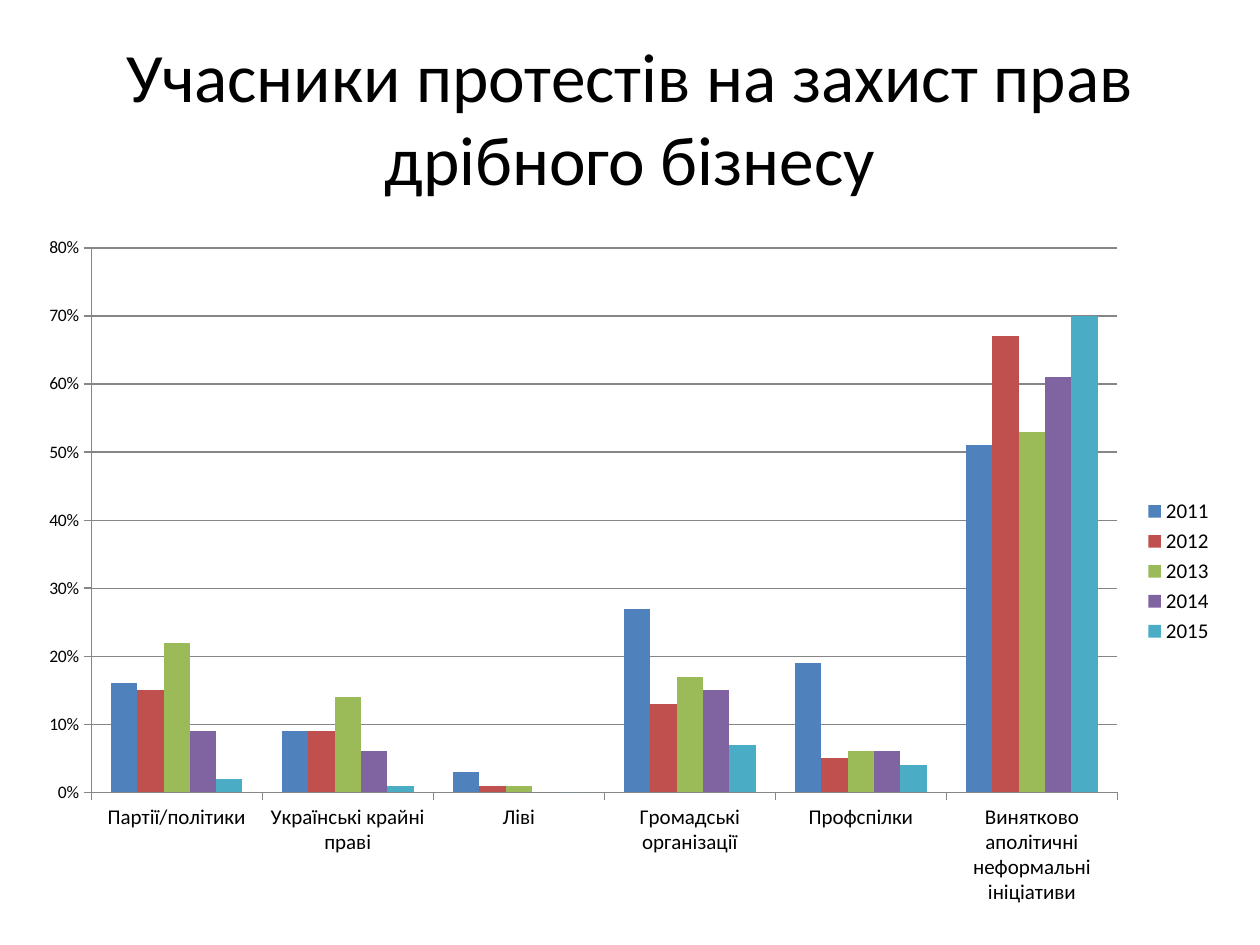
from pptx import Presentation
from pptx.chart.data import CategoryChartData
from pptx.dml.color import RGBColor
from pptx.enum.chart import XL_CHART_TYPE, XL_LEGEND_POSITION, XL_TICK_MARK
from pptx.enum.text import MSO_ANCHOR, MSO_AUTO_SIZE, PP_ALIGN
from pptx.util import Inches, Pt

COLUMNS = XL_CHART_TYPE.COLUMN_CLUSTERED
RIGHT = XL_LEGEND_POSITION.RIGHT
OUTSIDE = XL_TICK_MARK.OUTSIDE
MIDDLE = MSO_ANCHOR.MIDDLE
NO_FIT = MSO_AUTO_SIZE.NONE
CENTER = PP_ALIGN.CENTER

TITLE = "Учасники протестів на захист прав дрібного бізнесу"
GROUPS = [
    "Партії/політики",
    "Українські крайні праві",
    "Ліві",
    "Громадські організації",
    "Профспілки",
    "Винятково аполітичні неформальні ініціативи",
]
SHARES = {
    "2011": (0.16, 0.09, 0.03, 0.27, 0.19, 0.51),
    "2012": (0.15, 0.09, 0.01, 0.13, 0.05, 0.67),
    "2013": (0.22, 0.14, 0.01, 0.17, 0.06, 0.53),
    "2014": (0.09, 0.06, 0, 0.15, 0.06, 0.61),
    "2015": (0.02, 0.01, 0, 0.07, 0.04, 0.7),
}
THEME = {
    "font": "Calibri",
    "text": "000000",
    "line": "868686",
    "series": ("4F81BD", "C0504D", "9BBB59", "8064A2", "4BACC6"),
    "title_size": 39.6,
    "label_size": 12,
    "value_size": 10,
}
TITLE_BOX = (0.5, 0.3, 9, 1.25)
CHART_BOX = (0.2, 1.78, 9.53, 5.51)


def set_font(font, size):
    font.name = THEME["font"]
    font.size = Pt(size)
    font.color.rgb = RGBColor.from_string(THEME["text"])


def set_line(line):
    line.color.rgb = RGBColor.from_string(THEME["line"])
    line.width = Pt(0.75)


def add_title(slide):
    sp = slide.shapes.title
    sp.left, sp.top, sp.width, sp.height = map(Inches, TITLE_BOX)
    tf = sp.text_frame
    tf.text = TITLE
    for name, value in {"word_wrap": True, "auto_size": NO_FIT,
                        "vertical_anchor": MIDDLE}.items():
        setattr(tf, name, value)
    p = tf.paragraphs[0]
    p.alignment = CENTER
    set_font(p.runs[0].font, THEME["title_size"])


def add_share_chart(slide):
    data = CategoryChartData(number_format="0%")
    data.categories = GROUPS
    for year, shares in SHARES.items():
        data.add_series(year, shares)
    chart = slide.shapes.add_chart(COLUMNS, *map(Inches, CHART_BOX), data).chart
    chart.has_title = False
    set_font(chart.font, THEME["value_size"])

    plot = chart.plots[0]
    plot.vary_by_categories = False
    plot.gap_width = 150
    plot.overlap = 0
    for series, color in zip(plot.series, THEME["series"]):
        series.format.fill.solid()
        series.format.fill.fore_color.rgb = RGBColor.from_string(color)

    values = chart.value_axis
    for axis, size in ((chart.category_axis, THEME["label_size"]),
                       (values, THEME["value_size"])):
        axis.major_tick_mark = OUTSIDE
        set_line(axis.format.line)
        set_font(axis.tick_labels.font, size)
    for name, value in {"minimum_scale": 0, "maximum_scale": 0.8,
                        "major_unit": 0.1, "has_major_gridlines": True}.items():
        setattr(values, name, value)
    set_line(values.major_gridlines.format.line)
    values.tick_labels.number_format = "0%"
    values.tick_labels.number_format_is_linked = False

    chart.has_legend = True
    chart.legend.position = RIGHT
    chart.legend.include_in_layout = False
    set_font(chart.legend.font, THEME["label_size"])


def main():
    prs = Presentation()
    prs.slide_width, prs.slide_height = Inches(10), Inches(7.5)
    slide = prs.slides.add_slide(prs.slide_layouts[5])
    add_title(slide)
    add_share_chart(slide)
    prs.save("out.pptx")


if __name__ == "__main__":
    main()
